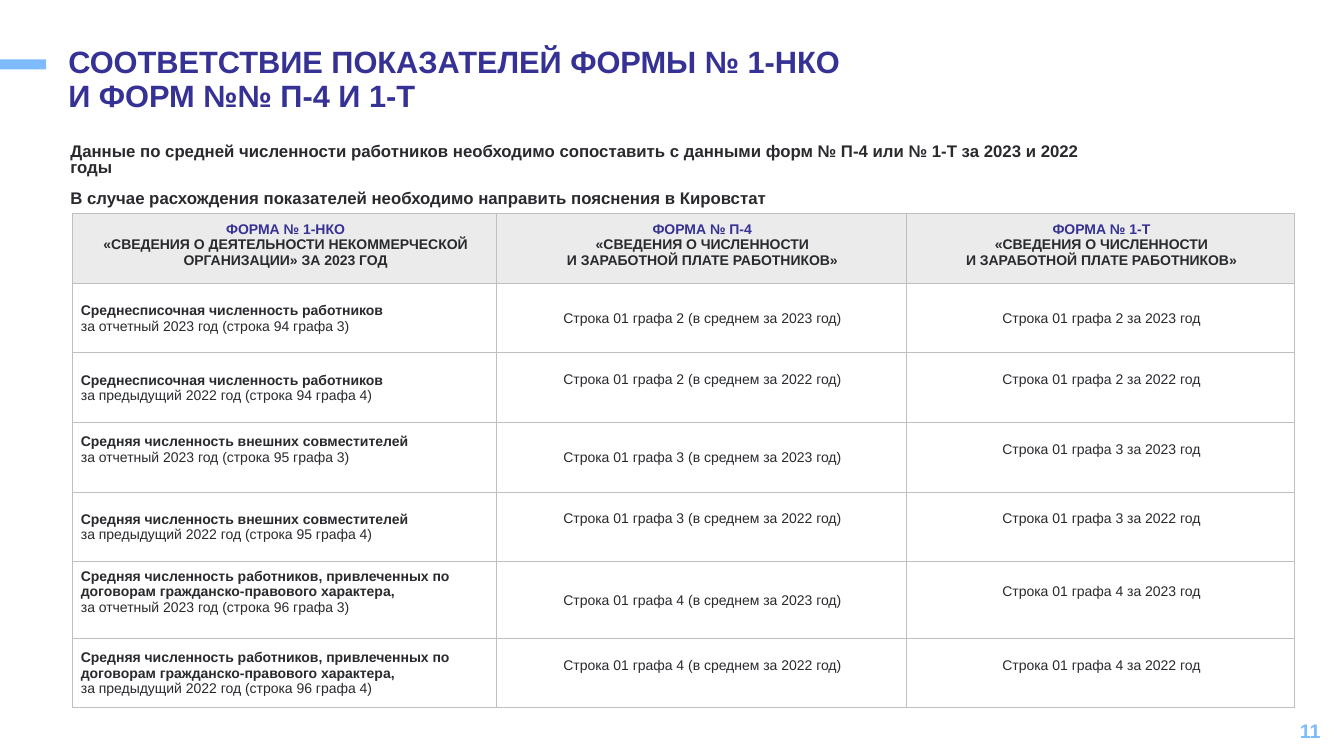
from lxml import etree
from pptx import Presentation
from pptx.dml.color import RGBColor
from pptx.enum.shapes import MSO_SHAPE
from pptx.enum.text import MSO_ANCHOR, PP_ALIGN
from pptx.oxml.ns import qn
from pptx.util import Pt

TITLE = "СООТВЕТСТВИЕ ПОКАЗАТЕЛЕЙ ФОРМЫ № 1-НКО\vИ ФОРМ №№ П-4 И 1-Т"
NOTES = [
    "Данные по средней численности работников необходимо сопоставить "
    "с данными форм № П-4 или № 1-Т за 2023 и 2022 годы",
    "В случае расхождения показателей необходимо направить пояснения в Кировстат",
]
PAGE_NUMBER = "11"
STAFF_FORM = ["«СВЕДЕНИЯ О ЧИСЛЕННОСТИ", "И ЗАРАБОТНОЙ ПЛАТЕ РАБОТНИКОВ»"]
HEADERS = [
    ["ФОРМА № 1-НКО",
     "«СВЕДЕНИЯ О ДЕЯТЕЛЬНОСТИ НЕКОММЕРЧЕСКОЙ ОРГАНИЗАЦИИ» ЗА 2023 ГОД"],
    ["ФОРМА № П-4", *STAFF_FORM],
    ["ФОРМА № 1-Т", *STAFF_FORM],
]
# Indicator, its line in form 1-НКО, its column in forms П-4 and 1-Т
INDICATORS = [
    ("Среднесписочная численность работников", 94, 2),
    ("Средняя численность внешних совместителей", 95, 3),
    ("Средняя численность работников, привлеченных по договорам "
     "гражданско-правового характера,", 96, 4),
]
# Period, year, column in form 1-НКО
PERIODS = [("отчетный", 2023, 3), ("предыдущий", 2022, 4)]
# Table cells (row, column) whose text sits half a line above the middle
RAISED = {(2, 1), (2, 2), (3, 0), (3, 2), (4, 1), (4, 2), (5, 0), (5, 2), (6, 1), (6, 2)}

COLUMN_WIDTHS = [302.4, 293, 277.2]
ROW_HEIGHTS = [49.7, 49.7, 49.7, 49.7, 49.7, 54.7, 49.7]
LINE_HEIGHT = 11.5

FONT = "Arial"
INDIGO = RGBColor(0x36, 0x31, 0x94)
SKY = RGBColor(0x7D, 0xBB, 0xFC)
INK = RGBColor(0x28, 0x2A, 0x2E)
HEADER_FILL = RGBColor(0xEB, 0xEB, 0xEB)
BORDER = RGBColor(0xBF, 0xBF, 0xBF)
CENTER, LEFT, RIGHT = PP_ALIGN.CENTER, PP_ALIGN.LEFT, PP_ALIGN.RIGHT
TOP, MIDDLE = MSO_ANCHOR.TOP, MSO_ANCHOR.MIDDLE


def style(para, size, color, bold=True, align=LEFT):
    para.alignment = align
    for span in para.runs:
        span.font.name = FONT
        span.font.size = Pt(size)
        span.font.bold = bold
        span.font.color.rgb = color


def add_text(page, place, lines, size, color, spacing=1.0, align=LEFT, anchor=TOP):
    box = page.shapes.add_textbox(*map(Pt, place))
    frame = box.text_frame
    frame.word_wrap = True
    frame.vertical_anchor = anchor
    frame.text = "\n".join(lines)
    for index, para in enumerate(frame.paragraphs):
        para.line_spacing = spacing
        if index:
            para.space_before = Pt(10)
        style(para, size, color, align=align)


def add_borders(cell):
    properties = cell._tc.get_or_add_tcPr()
    for index, side in enumerate(("a:lnL", "a:lnR", "a:lnT", "a:lnB")):
        line = etree.Element(qn(side), w=str(Pt(0.5)))
        fill = etree.SubElement(line, qn("a:solidFill"))
        etree.SubElement(fill, qn("a:srgbClr"), val=str(BORDER))
        properties.insert(index, line)


def fill_cell(cell, lines, is_header, is_indicator, is_raised):
    cell.text = "\n".join(lines)
    cell.margin_left, cell.margin_right = Pt(5.8), Pt(4.3)
    cell.margin_top = Pt(5.8 if is_header else 0.7)
    cell.margin_bottom = Pt(LINE_HEIGHT if is_raised else 0)
    cell.vertical_anchor = TOP if is_header else MIDDLE
    if is_header:
        cell.fill.solid()
        cell.fill.fore_color.rgb = HEADER_FILL
    else:
        cell.fill.background()
    for index, para in enumerate(cell.text_frame.paragraphs):
        is_first = index == 0
        style(para, 10, INDIGO if is_header and is_first else INK,
              bold=is_header or (is_indicator and is_first),
              align=LEFT if is_indicator else CENTER)
    add_borders(cell)


def table_rows():
    rows = [HEADERS]
    for name, line, column in INDICATORS:
        for period, year, own_column in PERIODS:
            rows.append([
                [name, f"за {period} {year} год (строка {line} графа {own_column})"],
                [f"Строка 01 графа {column} (в среднем за {year} год)"],
                [f"Строка 01 графа {column} за {year} год"],
            ])
    return rows


def add_comparison(page):
    rows = table_rows()
    table = page.shapes.add_table(
        len(rows), len(COLUMN_WIDTHS), Pt(52), Pt(152.6),
        Pt(sum(COLUMN_WIDTHS)), Pt(sum(ROW_HEIGHTS))).table
    table.first_row = table.horz_banding = False
    for column, width in zip(table.columns, COLUMN_WIDTHS):
        column.width = Pt(width)
    for row, height in zip(table.rows, ROW_HEIGHTS):
        row.height = Pt(height)
    for r, row in enumerate(rows):
        for c, lines in enumerate(row):
            fill_cell(table.cell(r, c), lines, r == 0, r > 0 and c == 0, (r, c) in RAISED)


def main():
    deck = Presentation()
    deck.slide_width, deck.slide_height = Pt(960), Pt(540)
    page = deck.slides.add_slide(deck.slide_layouts[6])

    accent = page.shapes.add_shape(MSO_SHAPE.RECTANGLE, 0, Pt(42.5), Pt(33), Pt(7))
    accent.shadow.inherit = False
    accent.fill.solid()
    accent.fill.fore_color.rgb = SKY
    accent.line.fill.background()

    add_text(page, (734.4, 507.6, 216, 28.8), [PAGE_NUMBER], 14, SKY,
             align=RIGHT, anchor=MIDDLE)
    add_comparison(page)
    add_text(page, (41.8, 30.2, 585.4, 53.3), [TITLE], 22, INDIGO, spacing=0.9)
    add_text(page, (43.2, 100, 760.3, 41), NOTES, 12, INK, spacing=0.8)
    deck.save("out.pptx")


if __name__ == "__main__":
    main()
